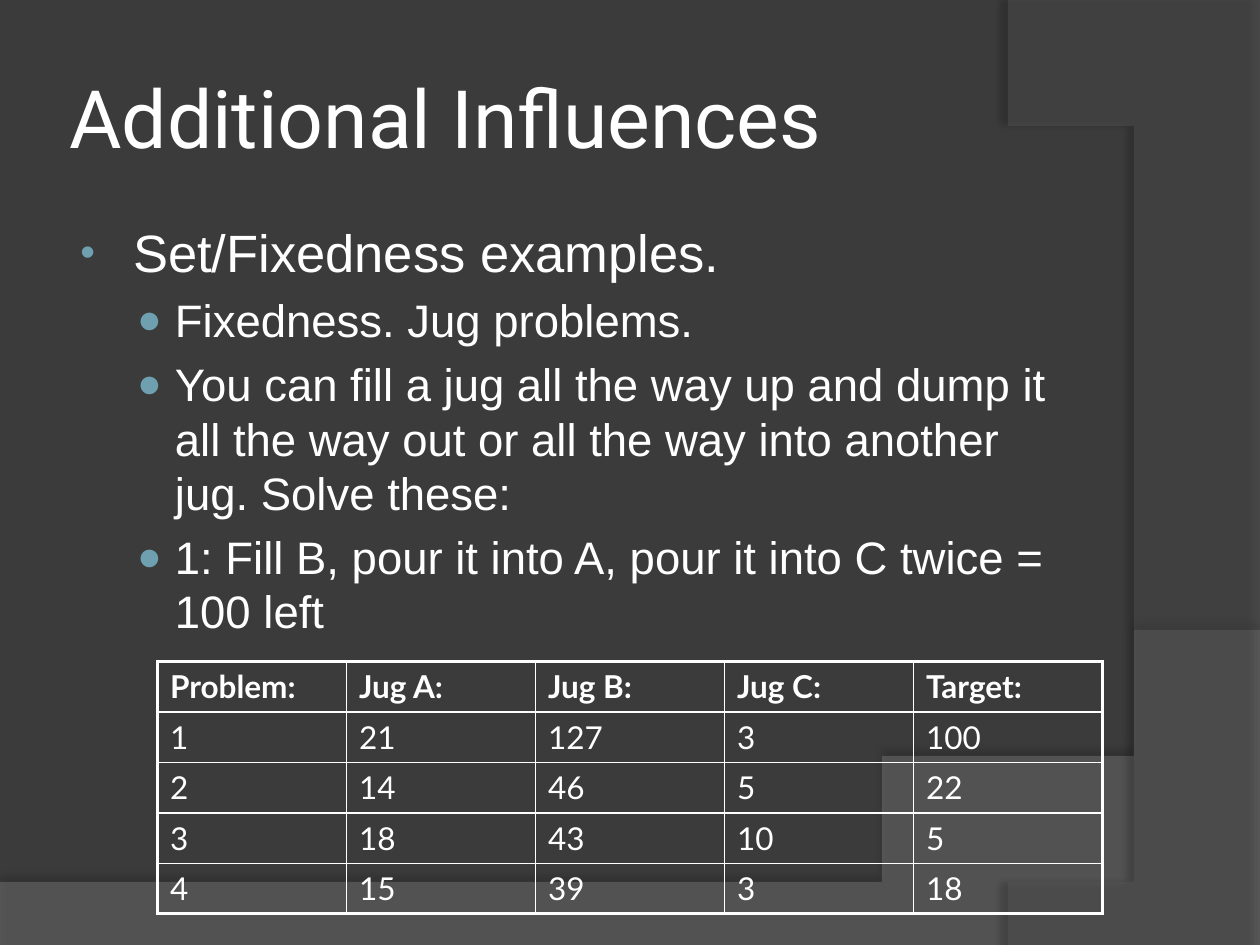
from lxml.etree import SubElement
from pptx import Presentation
from pptx.dml.color import RGBColor
from pptx.enum.text import MSO_ANCHOR, PP_ALIGN
from pptx.oxml import parse_xml
from pptx.oxml.ns import nsdecls, qn
from pptx.util import Emu, Inches, Pt

BACKGROUND = RGBColor(0x3B, 0x3B, 0x3B)
WHITE = RGBColor(0xFF, 0xFF, 0xFF)
BULLET = RGBColor(0x6E, 0xA0, 0xB0)
WAVE = RGBColor(0x7C, 0x7C, 0x7C)
ARC = RGBColor(0x59, 0x59, 0x59)

WIDTH, HEIGHT = 10, 7.5
MARGIN, CONTENT_WIDTH = 0.5, 8.17
CURVE_STEPS = 60

# Level settings: size, text indent, hanging indent, bullet, bullet size %, line spacing
LEVELS = [
    (30, 0.46, -0.42, "•", 80, 0.9),
    (26, 0.79, -0.3, "●", 90, 1.0),
]
POINTS = [
    (0, "Set/Fixedness examples."),
    (1, "Fixedness. Jug problems."),
    (1, "You can fill a jug all the way up and dump it all the way out "
        "or all the way into another jug. Solve these:"),
    (1, "1: Fill B, pour it into A, pour it into C twice = 100 left"),
]
JUGS = [
    ("Problem:", "Jug A:", "Jug B:", "Jug C:", "Target:"),
    (1, 21, 127, 3, 100),
    (2, 14, 46, 5, 22),
    (3, 18, 43, 10, 5),
    (4, 15, 39, 3, 18),
]


def add_span(para, text, font, size, bold=False):
    span = para.add_run()
    span.text = text
    span.font.name = font
    span.font.size = Pt(size)
    span.font.bold = bold
    span.font.color.rgb = WHITE


def bezier(start, first, second, end):
    """Points along a cubic curve, without its start."""
    points = []
    for step in range(1, CURVE_STEPS + 1):
        t = step / CURVE_STEPS
        u = 1 - t
        weights = (u**3, 3 * u * u * t, 3 * u * t * t, t**3)
        points.append(tuple(
            sum(w * p[axis] for w, p in zip(weights, (start, first, second, end)))
            for axis in (0, 1)))
    return points


def add_swoosh(page, corners, curve, color, opacity, shadow):
    """Translucent outline: straight corners, then a curve from the last one."""
    points = corners + bezier(corners[-1], *curve)
    builder = page.shapes.build_freeform(*points[0], scale=Inches(1))
    builder.add_line_segments(points[1:], close=True)
    swoosh = builder.convert_to_shape()
    swoosh.fill.solid()
    swoosh.fill.fore_color.rgb = color
    swoosh.line.fill.background()
    fill = swoosh._element.spPr.find(qn("a:solidFill"))
    SubElement(fill[0], qn("a:alpha"), val=str(opacity * 1000))
    alpha, blur, distance, angle = shadow
    swoosh._element.spPr.append(parse_xml(
        f'<a:effectLst {nsdecls("a")}><a:outerShdw blurRad="{Pt(blur)}" '
        f'dist="{Pt(distance)}" dir="{angle * 60000}" algn="ctr" rotWithShape="0">'
        f'<a:srgbClr val="000000"><a:alpha val="{alpha * 1000}"/></a:srgbClr>'
        f'</a:outerShdw></a:effectLst>'))


def add_title(page, text):
    title = page.shapes.title
    title.left, title.top = Inches(MARGIN), Inches(0.3)
    title.width, title.height = Inches(CONTENT_WIDTH), Inches(1.25)
    frame = title.text_frame
    frame.vertical_anchor = MSO_ANCHOR.MIDDLE
    frame.margin_left = frame.margin_right = Inches(0.05)
    para = frame.paragraphs[0]
    para.alignment = PP_ALIGN.LEFT
    add_span(para, text, "Roboto", 46)


def set_bullet(para, indent, hanging, mark, percent):
    properties = para._p.get_or_add_pPr()
    properties.set("marL", str(Inches(indent)))
    properties.set("indent", str(Inches(hanging)))
    color = SubElement(properties, qn("a:buClr"))
    SubElement(color, qn("a:srgbClr"), val=str(BULLET))
    SubElement(properties, qn("a:buSzPct"), val=str(percent * 1000))
    SubElement(properties, qn("a:buFont"), typeface="Arial")
    SubElement(properties, qn("a:buChar"), char=mark)


def add_points(page, points):
    box = page.shapes.add_textbox(
        Inches(MARGIN), Inches(1.75), Inches(CONTENT_WIDTH), Inches(4.95))
    frame = box.text_frame
    frame.word_wrap = True
    for index, (level, text) in enumerate(points):
        para = frame.add_paragraph() if index else frame.paragraphs[0]
        size, indent, hanging, mark, percent, spacing = LEVELS[level]
        para.level = level
        para.line_spacing = spacing
        para.space_before = Pt(size * 0.2)
        set_bullet(para, indent, hanging, mark, percent)
        add_span(para, text, "Arial", size)


def set_borders(cell, **widths):
    properties = cell._tc.get_or_add_tcPr()
    for position, (side, width) in enumerate(widths.items()):
        properties.insert(position, parse_xml(
            f'<a:ln{side} {nsdecls("a")} w="{Pt(width)}"><a:solidFill>'
            f'<a:srgbClr val="{WHITE}"/></a:solidFill></a:ln{side}>'))


def add_jug_table(page, rows):
    count, columns = len(rows), len(rows[0])
    table = page.shapes.add_table(
        count, columns, Inches(1.25), Inches(5.25),
        Inches(1.5 * columns), Inches(0.4 * count)).table
    table.horz_banding = False

    def weight(outer):
        return 2.25 if outer else 1

    for r, values in enumerate(rows):
        for c, value in enumerate(values):
            cell = table.cell(r, c)
            cell.fill.background()
            add_span(cell.text_frame.paragraphs[0], str(value), "Lato", 18, r == 0)
            set_borders(cell, L=weight(c == 0), R=weight(c == columns - 1),
                        T=weight(r == 0), B=weight(r == count - 1))


def main():
    deck = Presentation()
    deck.slide_width, deck.slide_height = Inches(WIDTH), Inches(HEIGHT)
    page = deck.slides.add_slide(deck.slide_layouts[5])
    page.background.fill.solid()
    page.background.fill.fore_color.rgb = BACKGROUND

    # Background swooshes
    add_swoosh(page, [(0, 7.05), (0, HEIGHT), (WIDTH, HEIGHT), (WIDTH, 5.2)],
               [(5.59, 7.29), (3.91, 7.19), (0, 7.05)], WAVE, 45, (35, 4, 3.5, 270))
    add_swoosh(page, [(WIDTH, 0), (WIDTH, HEIGHT), (8.21, HEIGHT)],
               [(9.35, 6.19), (10.18, 3), (8, 0)], ARC, 40, (45, 4, 4, 180))

    # Content
    add_title(page, "Additional Influences")
    add_points(page, POINTS)
    add_jug_table(page, JUGS)
    deck.save("out.pptx")


if __name__ == "__main__":
    main()
